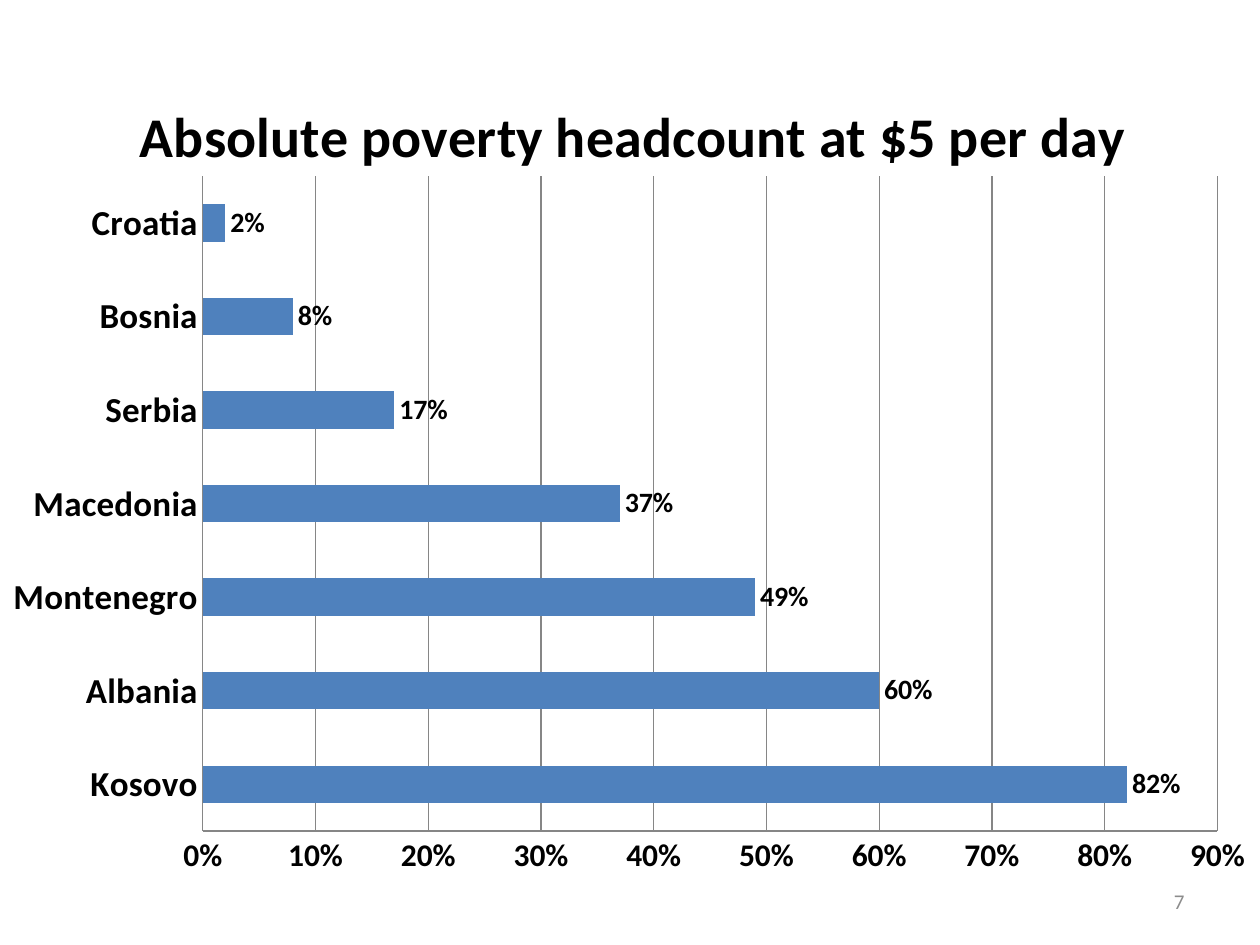
from lxml import etree
from pptx import Presentation
from pptx.chart.data import CategoryChartData
from pptx.dml.color import RGBColor
from pptx.enum.chart import XL_CHART_TYPE as ChartType, XL_LABEL_POSITION as LabelPos
from pptx.enum.chart import XL_TICK_MARK as TickMark
from pptx.enum.text import MSO_ANCHOR as Anchor, PP_ALIGN as Align
from pptx.oxml.ns import qn
from pptx.util import Pt

HEADCOUNT = {
    "Kosovo": 0.82,
    "Albania": 0.6,
    "Montenegro": 0.49,
    "Macedonia": 0.37,
    "Serbia": 0.17,
    "Bosnia": 0.08,
    "Croatia": 0.02,
}
PERCENT = "0%"
GRID_GREY = "868686"


def color(hex_code):
    return RGBColor.from_string(hex_code)


def style_font(font, size, hex_code="000000", bold=True):
    font.name = "Calibri"
    font.size = Pt(size)
    font.bold = bold
    font.color.rgb = color(hex_code)


def style_line(line, hex_code=GRID_GREY):
    line.color.rgb = color(hex_code)
    line.width = Pt(0.75)


def set_layout(parent, index, inner=False, **fractions):
    """Fix the place of a chart part, in fractions of the chart's box."""
    for old in parent.findall(qn("c:layout")):
        parent.remove(old)
    layout = etree.Element(qn("c:layout"))
    parent.insert(index, layout)
    manual = etree.SubElement(layout, qn("c:manualLayout"))
    settings = {"layoutTarget": "inner"} if inner else {}
    settings |= {"xMode": "edge", "yMode": "edge"} | fractions
    for name, value in settings.items():
        etree.SubElement(manual, qn(f"c:{name}")).set("val", str(value))


def style_axis(axis, size):
    axis.major_tick_mark = axis.minor_tick_mark = TickMark.NONE
    style_font(axis.tick_labels.font, size)
    style_line(axis.format.line)


def add_poverty_chart(slide, left, top, width, height):
    data = CategoryChartData(number_format=PERCENT)
    data.categories = list(HEADCOUNT)
    data.add_series("Series 1", list(HEADCOUNT.values()))
    chart = slide.shapes.add_chart(
        ChartType.BAR_CLUSTERED, Pt(left), Pt(top), Pt(width), Pt(height), data
    ).chart
    style_font(chart.font, 10, bold=False)
    chart.has_legend = False

    title = chart.chart_title
    heading = title.text_frame.paragraphs[0].add_run()
    heading.text = "Absolute poverty headcount at $5 per day"
    style_font(heading.font, 32)
    title.include_in_layout = False
    set_layout(title._element, 1, x=0.11, y=0.04)

    countries, share = chart.category_axis, chart.value_axis
    style_axis(countries, 20)
    style_axis(share, 18)
    share.minimum_scale, share.maximum_scale, share.major_unit = 0, 0.9, 0.1
    share.tick_labels.number_format = PERCENT
    share.tick_labels.number_format_is_linked = False
    share.has_major_gridlines = True
    style_line(share.major_gridlines.format.line)

    bars = chart.plots[0]
    bars.gap_width = 150
    bars.vary_by_categories = False
    fill = bars.series[0].format.fill
    fill.solid()
    fill.fore_color.rgb = color("4F81BD")
    labels = bars.series[0].data_labels
    labels.show_value = True
    labels.number_format = PERCENT
    labels.number_format_is_linked = False
    labels.position = LabelPos.OUTSIDE_END
    style_font(labels.font, 16)

    plot_area = chart._chartSpace.chart.plotArea
    set_layout(plot_area, 0, inner=True, x=0.167, y=0.147, w=0.791, h=0.782)


def add_page_number(slide, left, top, width, height):
    frame = slide.shapes.add_textbox(
        Pt(left), Pt(top), Pt(width), Pt(height)
    ).text_frame
    frame.word_wrap = True
    frame.vertical_anchor = Anchor.MIDDLE
    paragraph = frame.paragraphs[0]
    paragraph.alignment = Align.RIGHT
    number = paragraph.add_run()
    number.text = "7"
    style_font(number.font, 12, "8C8C8C", bold=False)


def main():
    deck = Presentation()
    deck.slide_width, deck.slide_height = Pt(720), Pt(540)
    slide = deck.slides.add_slide(deck.slide_layouts[6])
    add_page_number(slide, 516, 500.5, 168, 28.75)
    add_poverty_chart(slide, -6.5, 30.25, 733, 478.75)
    deck.save("out.pptx")


if __name__ == "__main__":
    main()
